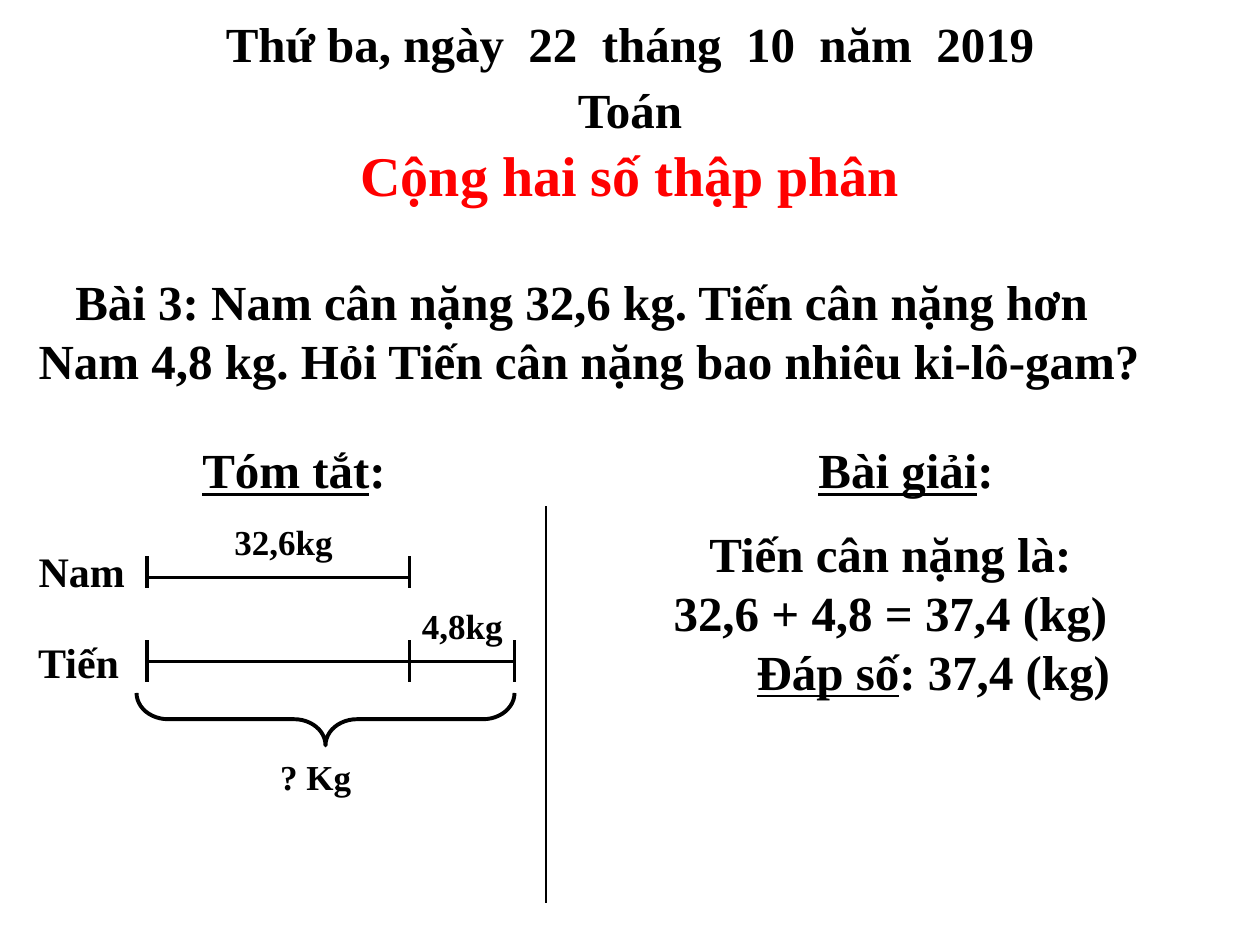
import pptx
import pptx.util
import pptx.dml.color
import pptx.enum.shapes
import pptx.enum.text
import pptx.oxml.ns
import lxml.etree

Pt = pptx.util.Pt
Shape = pptx.enum.shapes.MSO_SHAPE
Anchor = pptx.enum.text.MSO_ANCHOR
Align = pptx.enum.text.PP_ALIGN
Fit = pptx.enum.text.MSO_AUTO_SIZE

HUES = {"ink": "000000", "paper": "FFFFFF", "title": "FF0000"}
FONT = "Times New Roman"
CELL = pptx.util.Inches(1) / 12  # the slide is 120 columns by 90 rows


def hue(name):
    return pptx.dml.color.RGBColor.from_string(HUES[name])


class Board:
    def __init__(self, deck):
        self.slide = deck.slides.add_slide(deck.slide_layouts[5])
        self.shapes = self.slide.shapes

    def grid(self, *cells):
        return [round(cell * CELL) for cell in cells]

    def letter(self, shape, lines, size, color="ink", align=Align.LEFT, lead=0):
        """Put text in a shape; a line is a string or a list of runs, '_' marks underline.

        lead is the first-line indent of the last line, in points.
        """
        frame = shape.text_frame
        frame.word_wrap = True
        frame.auto_size = Fit.SHAPE_TO_FIT_TEXT
        frame.vertical_anchor = Anchor.TOP
        for row, line in enumerate(lines):
            para = frame.paragraphs[0] if row == 0 else frame.add_paragraph()
            para.alignment = align
            for part in [line] if isinstance(line, str) else line:
                run = para.add_run()
                run.text = part.lstrip("_")
                font = run.font
                font.name, font.size, font.bold = FONT, Pt(size), True
                font.underline = part.startswith("_")
                font.color.rgb = hue(color)
        if lead:
            para._p.get_or_add_pPr().set("indent", str(Pt(lead)))

    def title(self, text, place, size):
        head = self.shapes.title
        head.left, head.top, head.width, head.height = self.grid(*place)
        self.letter(head, [text], size, "title", Align.CENTER)

    def text(self, lines, place, size=28, align=Align.LEFT, lead=0):
        box = self.shapes.add_textbox(*self.grid(*place))
        self.letter(box, lines, size, align=align, lead=lead)

    def label(self, text, place, size=20, align=Align.CENTER, lead=0):
        """Add a text box with a paper-coloured outline."""
        box = self.shapes.add_shape(Shape.RECTANGLE, *self.grid(*place))
        box.shadow.inherit = False
        box.fill.background()
        box.line.color.rgb = hue("paper")
        box.line.width = Pt(0.75)
        self.letter(box, [text], size, align=align, lead=lead)
        return box

    def line(self, left, top, right, low, width=2.25):
        ends = self.grid(left, top, right, low)
        rule = self.shapes.add_connector(
            pptx.enum.shapes.MSO_CONNECTOR.STRAIGHT, *ends)
        rule.line.color.rgb = hue("ink")
        rule.line.width = Pt(width)
        tag = pptx.oxml.ns.qn("a:effectLst")
        lxml.etree.SubElement(rule._element.spPr, tag)

    def bar(self, stops, row, top, low):
        """Draw a level bar with a tick at every stop."""
        self.line(stops[0], row, stops[-1], row)
        for stop in stops:
            self.line(stop, top, stop, low)

    def brace(self, place):
        curve = self.shapes.add_shape(Shape.RIGHT_BRACE, *self.grid(*place))
        curve.rotation = 90
        curve.adjustments[0] = 0.6
        curve.adjustments[1] = 0.5
        curve.shadow.inherit = False
        curve.fill.background()
        curve.line.color.rgb = hue("ink")
        curve.line.width = Pt(2.25)


def main():
    deck = pptx.Presentation()
    deck.slide_width = pptx.util.Inches(10)
    deck.slide_height = pptx.util.Inches(7.5)
    board = Board(deck)
    mid = Align.CENTER

    board.text(["Thứ ba, ngày  22  tháng  10  năm  2019"],
               (0, 0.7, 120, 6.8), align=mid)
    board.text(["Toán"], (0, 7, 120, 6.8), align=mid)
    board.title("Cộng hai số thập phân", (0, 12.8, 120, 7.7), 32)
    board.text(["Bài 3: Nam cân nặng 32,6 kg. Tiến cân nặng hơn "
                "Nam 4,8 kg. Hỏi Tiến cân nặng bao nhiêu ki-lô-gam?"],
               (2.5, 25.3, 112.3, 12.5), lead=21)
    for name, col in (("Tóm tắt", 16), ("Bài giải", 74.3)):
        board.text([["_" + name, ":"]], (col, 41.3, 24, 6.8), align=mid)

    # Summary: both weights drawn as bars
    nam, tien = (14, 39), (14, 39, 49)
    board.text(["Nam"], (2.5, 51.4, 43, 6.1), 24)
    board.label("32,6kg", (16, 49, 22, 5.3))
    board.bar(nam, 55, 53, 56)
    name = board.label("Tiến", (4, 61, 7, 4), 24)
    name.text_frame.word_wrap = False
    name.text_frame.auto_size = Fit.NONE
    name.text_frame.vertical_anchor = Anchor.MIDDLE
    board.text(["4,8kg"], (34, 57, 21, 5.3), 20, lead=30)
    board.bar(tien, 63, 61, 65)
    board.brace((28.5, 50.5, 5, 36))
    board.label("? Kg", (20.5, 71.4, 22, 5.3), align=Align.LEFT, lead=30)

    # Solution
    board.line(52, 48.2, 52, 86, 0.75)
    board.text(["Tiến cân nặng là:", "32,6 + 4,8 = 37,4 (kg)",
                ["_Đáp số", ": 37,4 (kg)"]],
               (53, 49.3, 63.6, 18), align=mid, lead=49)
    deck.save("out.pptx")


if __name__ == "__main__":
    main()
